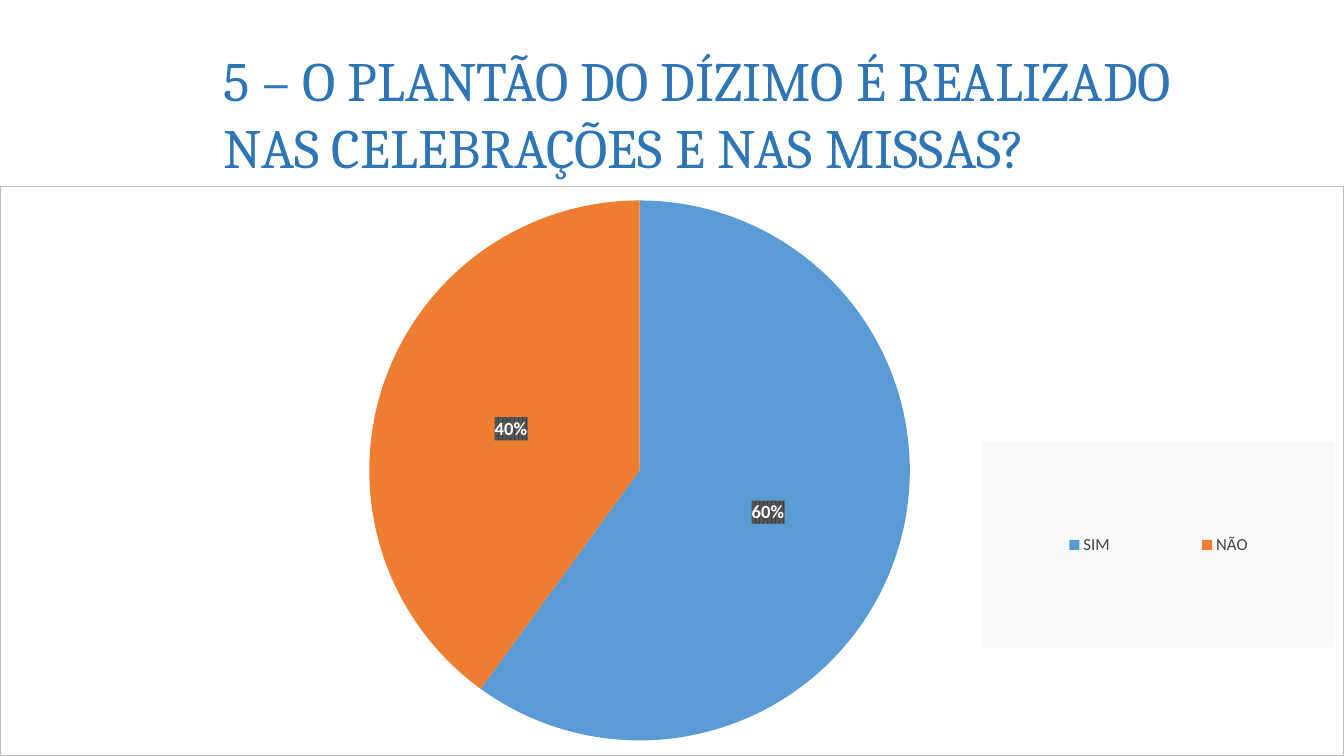
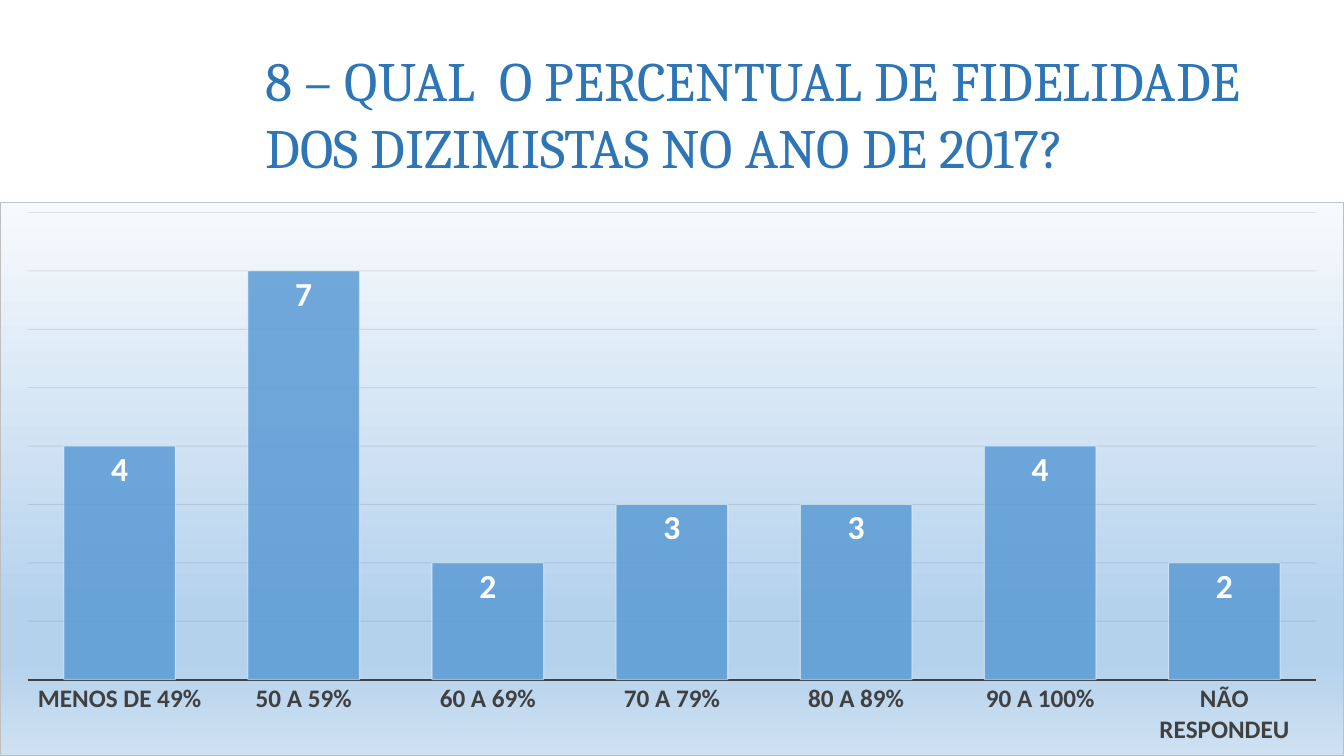
from lxml import etree
from pptx import Presentation
from pptx.chart.data import CategoryChartData
from pptx.dml.color import RGBColor
from pptx.enum.chart import XL_CHART_TYPE, XL_LABEL_POSITION, XL_LEGEND_POSITION, XL_TICK_MARK
from pptx.enum.text import MSO_ANCHOR
from pptx.oxml import parse_xml
from pptx.oxml.ns import nsdecls, qn
from pptx.util import Emu, Pt

PIE = XL_CHART_TYPE.PIE
COLUMNS = XL_CHART_TYPE.COLUMN_CLUSTERED
LABEL_CENTER = XL_LABEL_POSITION.CENTER
LABEL_INSIDE_END = XL_LABEL_POSITION.INSIDE_END
LEGEND_RIGHT = XL_LEGEND_POSITION.RIGHT
TICK_NONE = XL_TICK_MARK.NONE
MIDDLE = MSO_ANCHOR.MIDDLE

EMU_PER_PX = 914400 / 100.8
SLIDE_WIDTH, SLIDE_HEIGHT = 1344, 756
TITLE_TOP, TITLE_HEIGHT = 40, 146
TITLE_FONT, CHART_FONT = "Cambria", "Calibri"

TITLE_BLUE = RGBColor(0x2E, 0x75, 0xB6)
BLUE = RGBColor(0x5B, 0x9B, 0xD5)
ORANGE = RGBColor(0xED, 0x7D, 0x31)
WHITE = RGBColor(0xFF, 0xFF, 0xFF)
BLACK = RGBColor(0x00, 0x00, 0x00)
DARK_GRAY = RGBColor(0x40, 0x40, 0x40)
MID_GRAY = RGBColor(0x59, 0x59, 0x59)
GRID_GRAY = RGBColor(0x0D, 0x0D, 0x0D)
BORDER_GRAY = RGBColor(0xBF, 0xBF, 0xBF)
LEGEND_GRAY = RGBColor(0xF9, 0xF9, 0xF9)
GRADIENT_STOPS = [
    (0, RGBColor(0xF7, 0xFA, 0xFD)),
    (74, RGBColor(0xB5, 0xD2, 0xEC)),
    (83, RGBColor(0xB5, 0xD2, 0xEC)),
    (100, RGBColor(0xCE, 0xE1, 0xF2)),
]


def px(length):
    return Emu(round(length * EMU_PER_PX))


def solid_fill(color):
    return f'<a:solidFill><a:srgbClr val="{color}"/></a:solidFill>'


def gradient_fill(stops):
    stop_xml = "".join(
        f'<a:gs pos="{position * 1000}"><a:srgbClr val="{color}"/></a:gs>' for position, color in stops
    )
    return f'<a:gradFill><a:gsLst>{stop_xml}</a:gsLst><a:lin ang="5400000" scaled="0"/></a:gradFill>'


def pattern_fill(front, back):
    return (
        f'<a:pattFill prst="pct75"><a:fgClr><a:srgbClr val="{front}"/></a:fgClr>'
        f'<a:bgClr><a:srgbClr val="{back}"/></a:bgClr></a:pattFill>'
    )


def shape_properties(fill, line="<a:ln><a:noFill/></a:ln>"):
    return parse_xml(f'<c:spPr {nsdecls("c", "a")}>{fill}{line}</c:spPr>')


def manual_layout(box, frame, inner):
    left, top, width, height = box
    frame_left, frame_top, frame_width, frame_height = frame
    values = {
        "x": (left - frame_left) / frame_width,
        "y": (top - frame_top) / frame_height,
        "w": width / frame_width,
        "h": height / frame_height,
    }
    target = '<c:layoutTarget val="inner"/>' if inner else ""
    modes = '<c:xMode val="edge"/><c:yMode val="edge"/>'
    sizes = "".join(f'<c:{key} val="{value:.4f}"/>' for key, value in values.items())
    return parse_xml(
        f'<c:layout {nsdecls("c")}><c:manualLayout>{target}{modes}{sizes}</c:manualLayout></c:layout>'
    )


def remove_layout(element):
    for layout in element.findall(qn("c:layout")):
        element.remove(layout)


def set_alpha(color_element, percent):
    etree.SubElement(color_element, qn("a:alpha")).set("val", str(percent * 1000))


def style_font(font, name, size, color, bold=False):
    font.name = name
    font.size = Pt(size)
    font.color.rgb = color
    font.bold = bold


def add_title(slide, left, width, text):
    shape = slide.shapes.add_textbox(px(left), px(TITLE_TOP), px(width), px(TITLE_HEIGHT))
    text_frame = shape.text_frame
    text_frame.word_wrap = True
    text_frame.vertical_anchor = MIDDLE
    text_frame.text = text
    style_font(text_frame.paragraphs[0].runs[0].font, TITLE_FONT, 39.6, TITLE_BLUE)


def add_chart(slide, kind, frame, plot_box, categories, values, fill):
    chart_data = CategoryChartData()
    chart_data.categories = categories
    chart_data.add_series("Series 1", values)
    chart = slide.shapes.add_chart(kind, *map(px, frame), chart_data).chart
    chart.has_title = False
    chart.has_legend = False
    style_font(chart.font, CHART_FONT, 10, BLACK)
    chart_space = chart._chartSpace
    border = f'<a:ln w="9525">{solid_fill(BORDER_GRAY)}</a:ln>'
    chart_space.find(qn("c:chart")).addnext(shape_properties(fill, border))
    plot_area = chart_space.xpath("c:chart/c:plotArea")[0]
    remove_layout(plot_area)
    plot_area.insert(0, manual_layout(plot_box, frame, inner=True))
    return chart


def style_labels(series, size, position):
    labels = series.data_labels
    style_font(labels.font, CHART_FONT, size, WHITE, bold=True)
    labels.position = position
    return labels


def add_legend(chart, box, frame):
    chart.has_legend = True
    chart.legend.position = LEGEND_RIGHT
    chart.legend.include_in_layout = False
    style_font(chart.legend.font, CHART_FONT, 12, DARK_GRAY)
    legend = chart._chartSpace.xpath("c:chart/c:legend")[0]
    remove_layout(legend)
    legend.find(qn("c:legendPos")).addnext(manual_layout(box, frame, inner=False))
    legend.find(qn("c:txPr")).addprevious(shape_properties(solid_fill(LEGEND_GRAY)))


def add_pie_chart(slide, frame, plot_box, legend_box, categories, values):
    chart = add_chart(slide, PIE, frame, plot_box, categories, values, solid_fill(WHITE))
    chart.plots[0].vary_by_categories = True
    series = chart.plots[0].series[0]
    for index, color in enumerate((BLUE, ORANGE)):
        point_fill = series.points[index].format.fill
        point_fill.solid()
        point_fill.fore_color.rgb = color
    labels = style_labels(series, 13.3, LABEL_CENTER)
    labels.show_value = False
    labels.show_percentage = True
    labels.number_format = "0%"
    labels.number_format_is_linked = False
    label_text = series._element.xpath("c:dLbls/c:txPr")[0]
    label_text.addprevious(shape_properties(pattern_fill(DARK_GRAY, MID_GRAY)))
    add_legend(chart, legend_box, frame)


def style_axes(chart):
    category_axis = chart.category_axis
    category_axis.major_tick_mark = TICK_NONE
    category_axis.minor_tick_mark = TICK_NONE
    category_axis.format.line.color.rgb = DARK_GRAY
    category_axis.format.line.width = Pt(1.5)
    style_font(category_axis.tick_labels.font, CHART_FONT, 18, DARK_GRAY, bold=True)
    value_axis = chart.value_axis
    value_axis.visible = False
    value_axis.minimum_scale = 0
    value_axis.maximum_scale = 8
    value_axis.major_unit = 1
    value_axis.has_major_gridlines = True
    grid_line = value_axis.major_gridlines.format.line
    grid_line.color.rgb = GRID_GRAY
    grid_line.width = Pt(0.75)
    set_alpha(chart._chartSpace.xpath(".//c:majorGridlines//a:srgbClr")[0], 10)


def add_column_chart(slide, frame, plot_box, categories, values):
    chart = add_chart(slide, COLUMNS, frame, plot_box, categories, values, gradient_fill(GRADIENT_STOPS))
    style_axes(chart)
    plot = chart.plots[0]
    plot.vary_by_categories = False
    plot.gap_width = 65
    series = plot.series[0]
    series.format.fill.solid()
    series.format.fill.fore_color.rgb = BLUE
    series.format.line.color.rgb = WHITE
    series.format.line.width = Pt(0.75)
    set_alpha(series._element.xpath("c:spPr/a:solidFill/a:srgbClr")[0], 85)
    set_alpha(series._element.xpath("c:spPr/a:ln/a:solidFill/a:srgbClr")[0], 50)
    labels = style_labels(series, 24, LABEL_INSIDE_END)
    labels.show_value = True


def build_duty_slide(slide):
    add_title(slide, 214, 1037, "5 – O PLANTÃO DO DÍZIMO É REALIZADO NAS CELEBRAÇÕES E NAS MISSAS?")
    add_pie_chart(
        slide,
        frame=(0, 186, SLIDE_WIDTH, 570),
        plot_box=(369, 200, 541, 541),
        legend_box=(983, 442, 352, 206),
        categories=["SIM", "NÃO"],
        values=[60, 40],
    )


def build_fidelity_slide(slide):
    add_title(slide, 256, 1053, "8 – QUAL  O PERCENTUAL DE FIDELIDADE DOS DIZIMISTAS NO ANO DE 2017?")
    ranges = [f"{start} A {end}%" for start, end in ((50, 59), (60, 69), (70, 79), (80, 89), (90, 100))]
    add_column_chart(
        slide,
        frame=(0, 202, SLIDE_WIDTH, 554),
        plot_box=(27, 212, 1290, 468),
        categories=["MENOS DE 49%", *ranges, "NÃO RESPONDEU"],
        values=[4, 7, 2, 3, 3, 4, 2],
    )


def main():
    presentation = Presentation()
    presentation.slide_width = px(SLIDE_WIDTH)
    presentation.slide_height = px(SLIDE_HEIGHT)
    blank_layout = presentation.slide_layouts[6]
    for build_slide in (build_duty_slide, build_fidelity_slide):
        build_slide(presentation.slides.add_slide(blank_layout))
    presentation.save("out.pptx")


if __name__ == "__main__":
    main()
